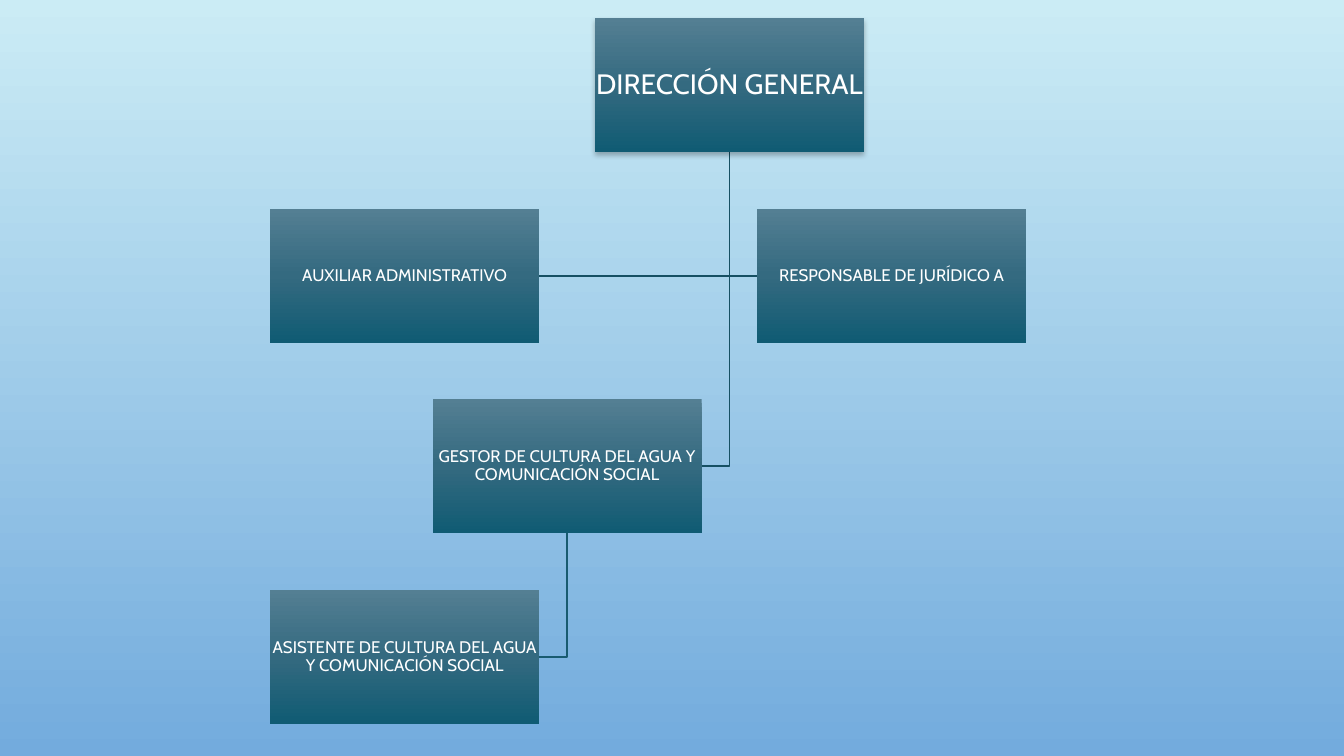
from copy import deepcopy

from lxml import etree
from pptx import Presentation
from pptx import util as u
from pptx.dml.color import RGBColor
from pptx.enum import shapes, text
from pptx.oxml import ns

SKY = (RGBColor(0xCB, 0xEC, 0xF5), RGBColor(0x73, 0xAB, 0xDD))
TEAL = (RGBColor(0x54, 0x7F, 0x93), RGBColor(0x34, 0x6A, 0x80), RGBColor(0x10, 0x5B, 0x73))
WHITE = RGBColor(0xFF, 0xFF, 0xFF)
LINE_TOP = RGBColor(0x16, 0x50, 0x63)
LINE_LOW = RGBColor(0x19, 0x5B, 0x70)

# Chart grid: half-overlapping columns and evenly spaced rows, in inches
LEFT, TOP = 2.68, 0.18
COL_STEP, ROW_STEP = 1.61, 1.89
BOX_W, BOX_H = 2.67, 1.33

# Posts: name -> (column, row, label, text size)
POSTS = {
    "direccion": (2, 0, "DIRECCIÓN GENERAL", 20),
    "auxiliar": (0, 1, "AUXILIAR ADMINISTRATIVO", 12),
    "juridico": (3, 1, "RESPONSABLE DE JURÍDICO A", 12),
    "gestor": (1, 2, "GESTOR DE CULTURA DEL AGUA Y COMUNICACIÓN SOCIAL", 12),
    "asistente": (0, 3, "ASISTENTE DE CULTURA DEL AGUA Y COMUNICACIÓN SOCIAL", 12),
}
LINKS = [
    ("gestor", "asistente", LINE_LOW),
    ("direccion", "gestor", LINE_TOP),
    ("direccion", "juridico", LINE_TOP),
    ("direccion", "auxiliar", LINE_TOP),
]


def corner(post):
    col, row = POSTS[post][:2]
    return LEFT + col * COL_STEP, TOP + row * ROW_STEP


class OrgChart:
    font = "Cabin"
    line_width = u.Pt(1.25)

    def __init__(self, slide):
        self.s = slide

    def gradient(self, fill, element, colours):
        """Fill from top to bottom with evenly spaced colours."""
        fill.gradient()
        fill.gradient_angle = 270
        stops = next(element.iter(ns.qn("a:gsLst")))
        for _ in colours[2:]:
            stops.insert(1, deepcopy(stops[0]))
        for i, (stop, colour) in enumerate(zip(fill.gradient_stops, colours)):
            stop.color.rgb = colour
            stop.position = i / (len(colours) - 1)

    def background(self, colours):
        self.gradient(self.s.background.fill, self.s._element, colours)

    def elbow(self, parent, child, colour):
        """Run down from the parent, then sideways to the child's near edge."""
        x, y = corner(parent)
        end_x, end_y = corner(child)
        x += BOX_W / 2
        if end_x < x:
            end_x += BOX_W
        end_y += BOX_H / 2
        path = [(u.Inches(a), u.Inches(b)) for a, b in
                ((x, y + BOX_H), (x, end_y), (end_x, end_y))]
        builder = self.s.shapes.build_freeform(*path[0])
        builder.add_line_segments(path[1:], close=False)
        sp = builder.convert_to_shape()
        sp.shadow.inherit = False
        sp.fill.background()
        sp.line.color.rgb = colour
        sp.line.width = self.line_width

    def box(self, post):
        label, size = POSTS[post][2:]
        x, y = corner(post)
        sp = self.s.shapes.add_shape(
            shapes.MSO_SHAPE.RECTANGLE,
            u.Inches(x), u.Inches(y), u.Inches(BOX_W), u.Inches(BOX_H))
        sp.shadow.inherit = False
        sp.line.fill.background()
        self.gradient(sp.fill, sp._element, TEAL)
        tf = sp.text_frame
        tf.word_wrap = True
        tf.vertical_anchor = text.MSO_ANCHOR.MIDDLE
        tf.margin_left = tf.margin_right = tf.margin_top = tf.margin_bottom = u.Inches(0.01)
        p = tf.paragraphs[0]
        p.text = label
        p.alignment = text.PP_ALIGN.CENTER
        p.line_spacing = 0.9
        p.font.name = self.font
        p.font.size = u.Pt(size)
        p.font.color.rgb = WHITE
        return sp

    def drop_shadow(self, sp):
        effects = sp._element.spPr.find(ns.qn("a:effectLst"))
        shadow = etree.SubElement(
            effects, ns.qn("a:outerShdw"), blurRad=str(u.Pt(4)), dist=str(u.Pt(2)),
            dir="5400000", rotWithShape="0")
        colour = etree.SubElement(shadow, ns.qn("a:srgbClr"), val="000000")
        etree.SubElement(colour, ns.qn("a:alpha"), val="28000")


def main():
    prs = Presentation()
    prs.slide_width, prs.slide_height = u.Inches(13.33), u.Inches(7.5)
    chart = OrgChart(prs.slides.add_slide(prs.slide_layouts[6]))
    chart.background(SKY)

    # Lines lie behind the boxes
    for link in LINKS:
        chart.elbow(*link)

    # Only the head of the chart casts a shadow
    boxes = {post: chart.box(post) for post in POSTS}
    chart.drop_shadow(boxes["direccion"])

    prs.save("out.pptx")


if __name__ == "__main__":
    main()
